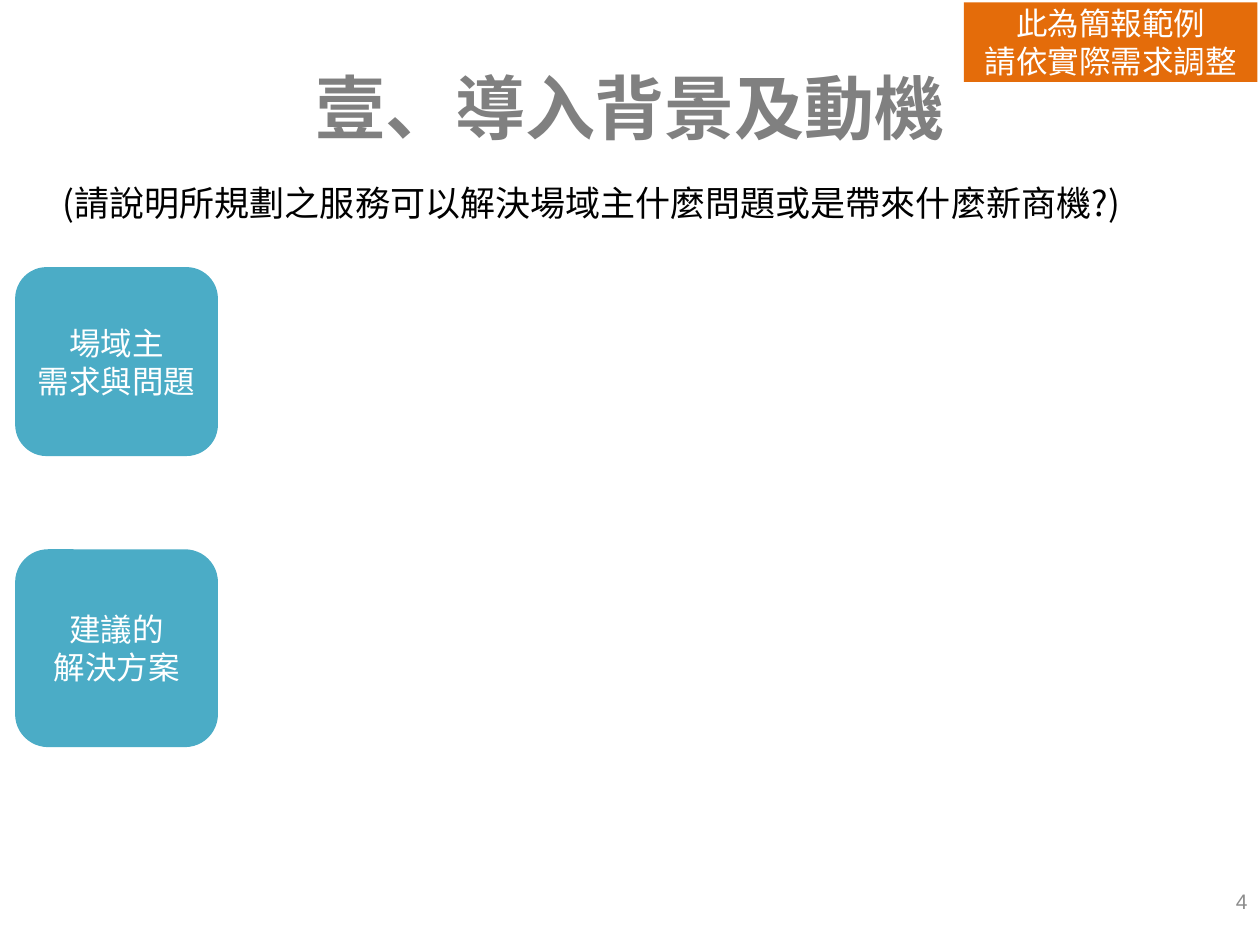
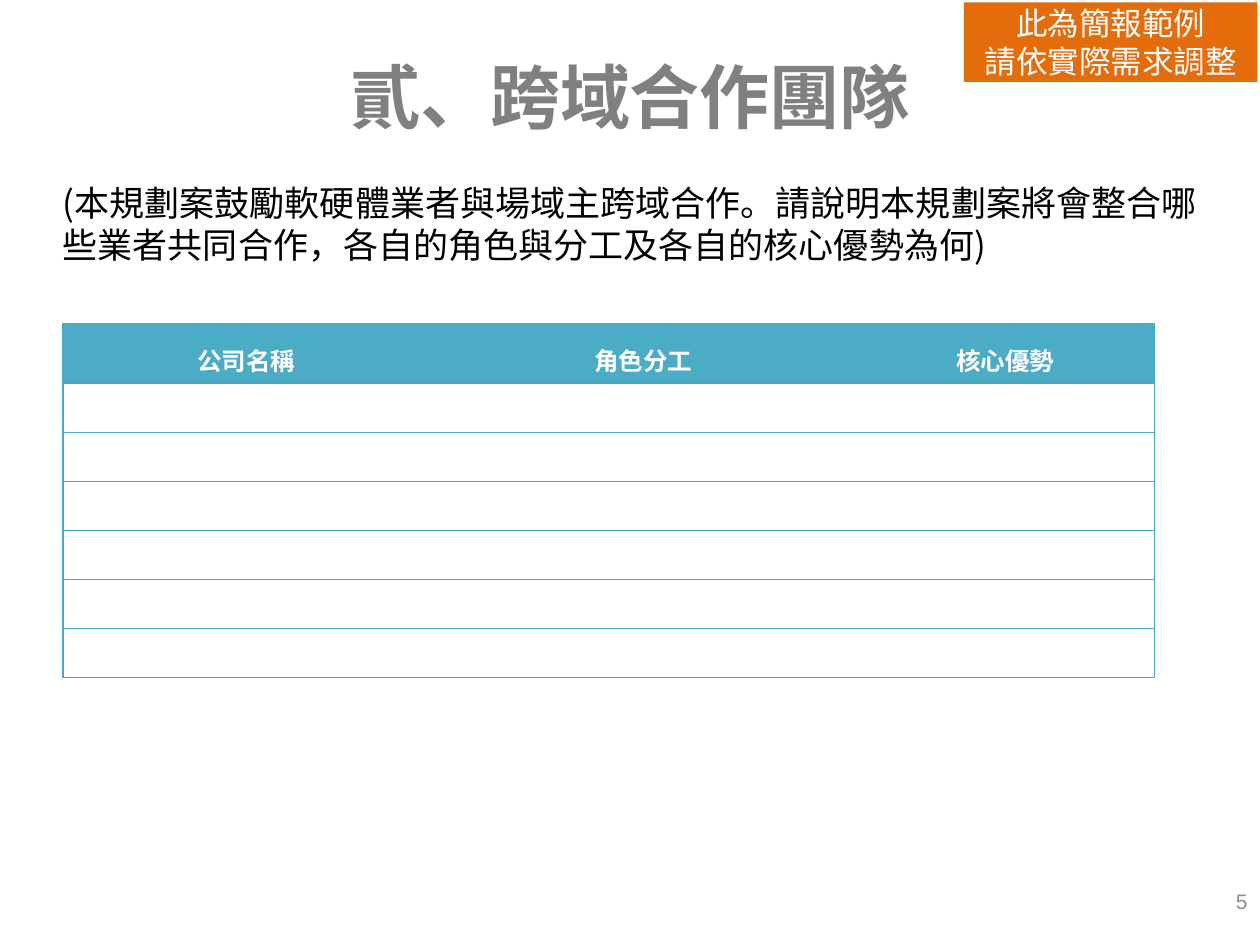
"""Build two proposal slides: background and motivation, and the cross-domain team."""
from pptx import Presentation
from pptx.dml.color import RGBColor as RGB
from pptx.enum.shapes import MSO_SHAPE as SHAPE
from pptx.enum.text import MSO_ANCHOR as ANCHOR, PP_ALIGN as ALIGN
from pptx.oxml import parse_xml
from pptx.oxml.ns import nsdecls, qn
from pptx.util import Inches, Pt

COLORS = {"title": "808080", "text": "000000", "number": "8C8C8C", "white": "FFFFFF",
          "teal": "4BACC6", "border": "46AAC5", "orange": "E46C0A"}
CJK = "Noto Sans CJK SC"


def write(tf, lines, size, color, font="Arial", bold=False, align=ALIGN.CENTER, anchor=ANCHOR.MIDDLE):
    tf.word_wrap = True
    tf.vertical_anchor = anchor
    for i, line in enumerate(lines):
        p = tf.add_paragraph() if i else tf.paragraphs[0]
        p.alignment = align
        r = p.add_run()
        r.text = line
        r.font.size, r.font.bold, r.font.name = Pt(size), bold, font
        r.font.color.rgb = RGB.from_string(COLORS[color])
        r.font._element.find(qn("a:latin")).addnext(
            parse_xml(f'<a:ea {nsdecls("a")} typeface="{CJK}"/>'))


def add_box(s, kind, box, fill, lines):
    sp = s.shapes.add_shape(kind, *map(Inches, box))
    sp.shadow.inherit = False
    sp.fill.solid()
    sp.fill.fore_color.rgb = RGB.from_string(COLORS[fill])
    sp.line.fill.background()
    write(sp.text_frame, lines, 18, "white")


prs = Presentation()
prs.slide_width, prs.slide_height = Inches(10), Inches(7.5)

pages = [
    ("壹、導入背景及動機", 0.22, 0.44, "4",
     "(請說明所規劃之服務可以解決場域主什麼問題或是帶來什麼新商機?)"),
    ("貳、跨域合作團隊", 0.13, 0.77, "5",
     "(本規劃案鼓勵軟硬體業者與場域主跨域合作。請說明本規劃案將會整合哪些業者共同合作，"
     "各自的角色與分工及各自的核心優勢為何)"),
]
for title, title_top, hint_height, number, hint in pages:
    s = prs.slides.add_slide(prs.slide_layouts[5])
    sp = s.shapes.title
    sp.left, sp.top, sp.width, sp.height = map(Inches, (0.5, title_top, 9, 1.25))
    write(sp.text_frame, [title], 40, "title", CJK, True)
    sp = s.shapes.add_textbox(*map(Inches, (0.4, 1.39, 9.4, hint_height)))
    write(sp.text_frame, [hint], 20, "text", CJK, align=ALIGN.LEFT, anchor=ANCHOR.TOP)
    sp = s.shapes.add_textbox(*map(Inches, (7.67, 6.95, 2.33, 0.4)))
    write(sp.text_frame, [number], 12, "number", align=ALIGN.RIGHT)
    add_box(s, SHAPE.RECTANGLE, (7.65, 0.02, 2.33, 0.63), "orange",
            ["此為簡報範例", "請依實際需求調整"])

background, team = prs.slides
for top, height, lines in [(2.12, 1.5, ["場域主", "需求與問題"]),
                           (4.36, 1.57, ["建議的", "解決方案"])]:
    add_box(background, SHAPE.ROUNDED_RECTANGLE, (0.12, top, 1.61, height), "teal", lines)

headers = ["公司名稱", "角色分工", "核心優勢"]
widths = [2.91, 3.39, 2.36]
heights = [0.47] + [0.39] * 6
table = team.shapes.add_table(len(heights), len(widths), *map(
    Inches, (0.5, 2.57, sum(widths), sum(heights)))).table
table._tbl.tblPr.find(qn("a:tableStyleId")).text = "{2D5ABB26-0587-4C30-8999-92F81FD0307C}"
for column, width in zip(table.columns, widths):
    column.width = Inches(width)
for i, height in enumerate(heights):
    table.rows[i].height = Inches(height)
    for j, header in enumerate(headers):
        cell = table.cell(i, j)
        cell.margin_left = cell.margin_right = Inches(0.07)
        cell.margin_top = cell.margin_bottom = 0
        cell.fill.solid()
        cell.fill.fore_color.rgb = RGB.from_string(COLORS["white" if i else "teal"])
        if i == 0:
            write(cell.text_frame, [header], 14, "white", bold=True)
            cell.text_frame.paragraphs[0].line_spacing = Pt(28)
            cell.vertical_anchor = ANCHOR.MIDDLE
        sides = "L" * (j == 0) + "R" * (j == len(widths) - 1) + "TB"
        for k, side in enumerate(sides):
            cell._tc.get_or_add_tcPr().insert(k, parse_xml(
                f'<a:ln{side} {nsdecls("a")} w="{Pt(0.75)}"><a:solidFill>'
                f'<a:srgbClr val="{COLORS["border"]}"/></a:solidFill></a:ln{side}>'))

prs.save("out.pptx")
